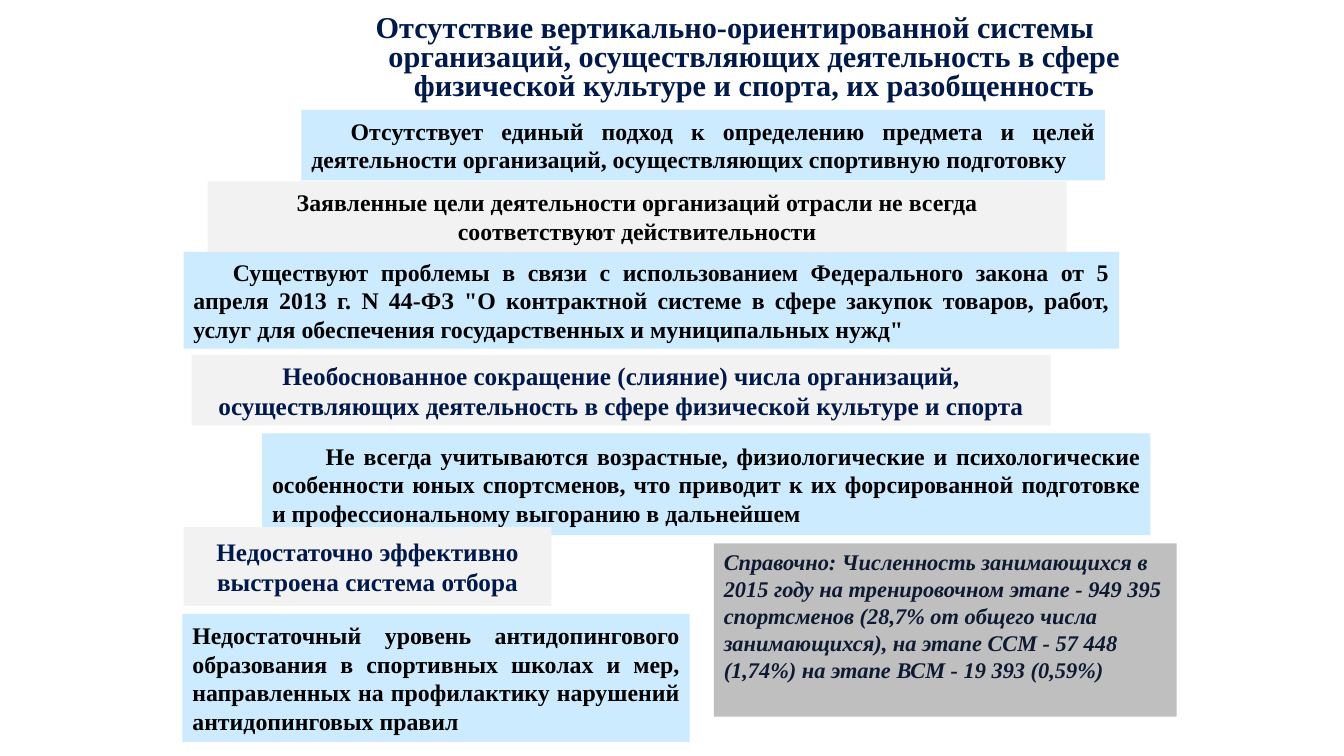
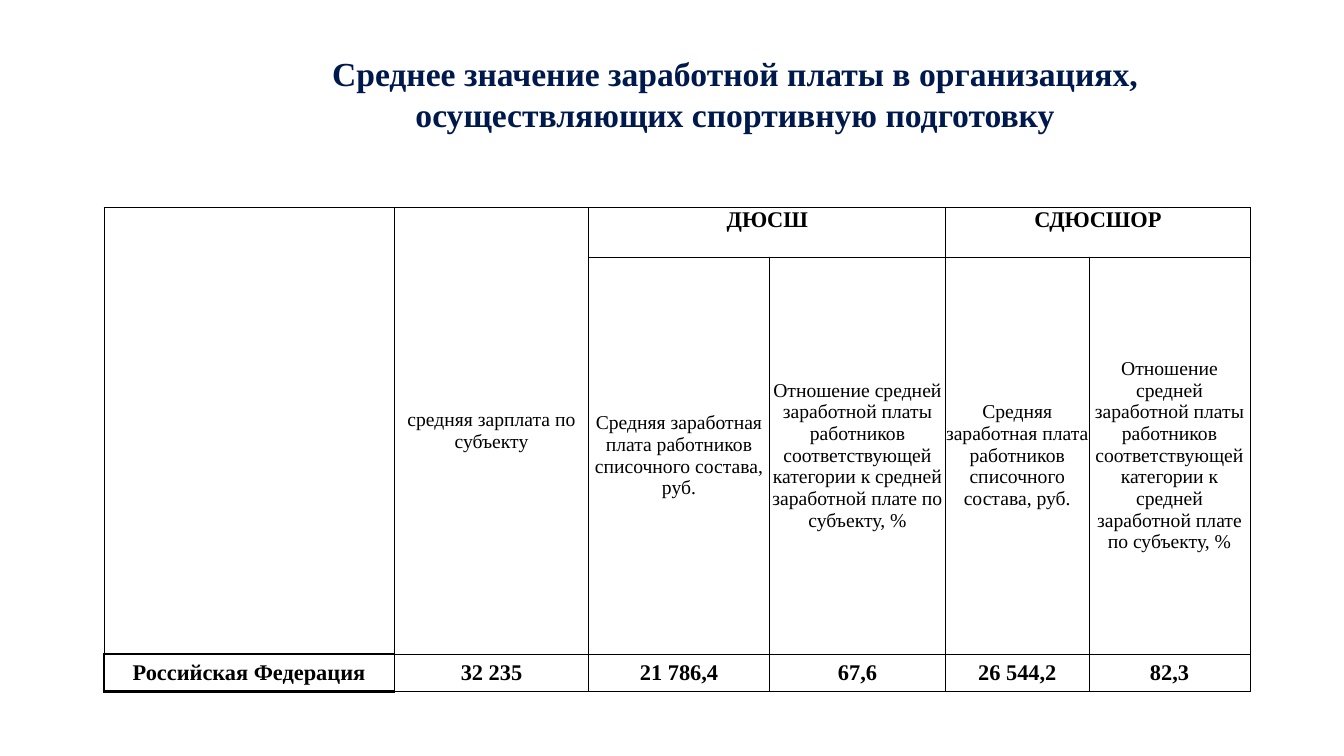
from lxml import etree
from pptx import Presentation
from pptx.dml.color import RGBColor
from pptx.enum.shapes import MSO_SHAPE as Preset
from pptx.enum.text import MSO_ANCHOR as Anchor, PP_ALIGN as Align
from pptx.oxml.ns import qn
from pptx.util import Inches, Pt

COLORS = {
    "navy": "00194C", "ink": "0E1932", "black": "000000", "white": "FFFFFF",
    "blue": "CCEBFF", "light": "F2F2F2", "grey": "BFBFBF",
}
FONT = "Times New Roman"


def color(name):
    return RGBColor.from_string(COLORS[name])


def write_text(frame, text, size=17, ink="black", bold=True, italic=False,
               align=Align.CENTER, left=0, indent=0, spacing=None):
    """Write one formatted paragraph into a text frame."""
    frame.word_wrap = True
    para = frame.paragraphs[0]
    para.alignment = align
    if spacing:
        para.line_spacing = spacing
    if left or indent:
        props = para._p.get_or_add_pPr()
        props.set("marL", str(Inches(left)))
        props.set("indent", str(Inches(indent)))
    span = para.add_run()
    span.text = text
    font = span.font
    font.name, font.size, font.bold, font.italic = FONT, Pt(size), bold, italic
    font.color.rgb = color(ink)


def set_borders(cell, **widths):
    """Draw black cell borders; widths are points for L, R, T and B."""
    props = cell._tc.get_or_add_tcPr()
    for side in "LRTB":
        line = etree.SubElement(props, qn("a:ln" + side),
                                w=str(Pt(widths.get(side, 0.5))))
        fill = etree.SubElement(line, qn("a:solidFill"))
        etree.SubElement(fill, qn("a:srgbClr"), val=COLORS["black"])


class Slides:
    """Holds the shared style and the current slide."""

    def __init__(self):
        self.deck = Presentation()
        self.deck.slide_width = Inches(13.33)
        self.deck.slide_height = Inches(7.5)
        self.page = None

    def new_page(self):
        self.page = self.deck.slides.add_slide(self.deck.slide_layouts[6])
        background = self.page.background.fill
        background.solid()
        background.fore_color.rgb = color("white")

    def title(self, text, top, height, anchor=Anchor.MIDDLE, **style):
        box = self.page.shapes.add_textbox(
            Inches(2.91), Inches(top), Inches(8.76), Inches(height))
        box.text_frame.vertical_anchor = anchor
        write_text(box.text_frame, text, ink="navy", **style)

    def panel(self, text, place, fill, anchor=Anchor.MIDDLE, **style):
        box = self.page.shapes.add_shape(
            Preset.RECTANGLE, *[Inches(length) for length in place])
        box.shadow.inherit = False
        box.fill.solid()
        box.fill.fore_color.rgb = color(fill)
        box.line.fill.background()
        box.text_frame.vertical_anchor = anchor
        write_text(box.text_frame, text, **style)

    def table(self, left, top, widths, heights):
        table = self.page.shapes.add_table(
            len(heights), len(widths), Inches(left), Inches(top),
            Inches(sum(widths)), Inches(sum(heights))).table
        table.first_row = table.horz_banding = False
        for column, width in zip(table.columns, widths):
            column.width = Inches(width)
        for row, height in zip(table.rows, heights):
            row.height = Inches(height)
        return table

    def cell(self, cell, text, borders, anchor=Anchor.MIDDLE, **style):
        set_borders(cell, **borders)
        cell.fill.solid()
        cell.fill.fore_color.rgb = color("white")
        cell.margin_left = cell.margin_right = 0
        cell.margin_top = cell.margin_bottom = 0
        cell.vertical_anchor = anchor
        if text:
            write_text(cell.text_frame, text, **style)


def build_problems(slides):
    slides.new_page()

    # Reference note and title
    slides.panel(
        "Справочно: Численность занимающихся в 2015 году на тренировочном этапе - "
        "949 395 спортсменов (28,7% от общего числа занимающихся), на этапе ССМ - "
        "57 448 (1,74%) на этапе ВСМ - 19 393 (0,59%)",
        (7.08, 5.39, 4.59, 1.72), "grey", Anchor.TOP,
        size=16, ink="ink", italic=True, align=Align.LEFT)
    slides.title(
        "Отсутствие вертикально-ориентированной системы организаций, осуществляющих "
        "деятельность в сфере физической культуре и спорта, их разобщенность",
        0, 1.06, Anchor.BOTTOM, size=21.6, left=0.38, indent=-0.38, spacing=0.8)

    # Blue panels: justified text
    for text, place, indent in [
        ("Отсутствует единый подход к определению предмета и целей деятельности "
         "организаций, осуществляющих спортивную подготовку",
         (2.99, 1.09, 7.97, 0.7), 0.39),
        ("Существуют проблемы в связи с использованием Федерального закона от "
         "5 апреля 2013 г. N 44-ФЗ \"О контрактной системе в сфере закупок товаров, "
         "работ, услуг для обеспечения государственных и муниципальных нужд\"",
         (1.82, 2.5, 9.28, 0.96), 0.39),
        ("Не всегда учитываются возрастные, физиологические и психологические "
         "особенности юных спортсменов, что приводит к их форсированной подготовке "
         "и профессиональному выгоранию в дальнейшем",
         (2.6, 4.3, 8.81, 1.01), 0.53),
        ("Недостаточный уровень антидопингового образования в спортивных школах и "
         "мер, направленных на профилактику нарушений антидопинговых правил",
         (1.81, 6.09, 5.03, 1.27), 0),
    ]:
        slides.panel(text, place, "blue", align=Align.JUSTIFY, indent=indent)

    # Light panels: centred text
    for text, place, size, ink in [
        ("Заявленные цели деятельности организаций отрасли не всегда "
         "соответствуют действительности", (2.06, 1.8, 8.52, 0.7), 17, "black"),
        ("Необоснованное сокращение (слияние) числа организаций, осуществляющих "
         "деятельность в сфере физической культуре и спорта",
         (1.9, 3.52, 8.52, 0.7), 18, "navy"),
        ("Недостаточно эффективно выстроена система отбора",
         (1.82, 5.23, 3.65, 0.78), 18, "navy"),
    ]:
        slides.panel(text, place, "light", size=size, ink=ink)


def build_salaries(slides):
    slides.new_page()
    slides.title("Среднее значение заработной платы в организациях, "
                 "осуществляющих спортивную подготовку", 0.2, 1.46, size=24)

    # Table texts; empty strings are covered by merged cells
    salary = "Средняя заработная плата работников списочного состава, руб."
    ratio = ("Отношение средней заработной платы работников соответствующей "
             "категории к средней заработной плате по субъекту, %")
    rows = [
        ["", "средняя зарплата по субъекту", "ДЮСШ", "", "СДЮСШОР", ""],
        ["", "", salary, ratio, salary, ratio],
        ["Российская Федерация", "32 235", "21 786,4", "67,6", "26 544,2", "82,3"],
    ]
    heavy = {(0, 0): {"B": 2}, (1, 0): {"B": 2}, (2, 0): {"L": 2, "T": 2, "B": 2}}

    table = slides.table(1.03, 2.06, [2.88, 1.93, 1.79, 1.75, 1.42, 1.6],
                         [0.49, 3.94, 0.37])
    for r, texts in enumerate(rows):
        for c, text in enumerate(texts):
            group = r == 0 and c >= 2
            bold = group or r == 2
            slides.cell(table.cell(r, c), text, heavy.get((r, c), {}),
                        Anchor.TOP if group else Anchor.MIDDLE,
                        size=16 if bold else 14, bold=bold)

    # Merged headings
    for column in (0, 1):
        table.cell(0, column).merge(table.cell(1, column))
    for column in (2, 4):
        table.cell(0, column).merge(table.cell(0, column + 1))


def main():
    slides = Slides()
    build_problems(slides)
    build_salaries(slides)
    slides.deck.save("out.pptx")


if __name__ == "__main__":
    main()
